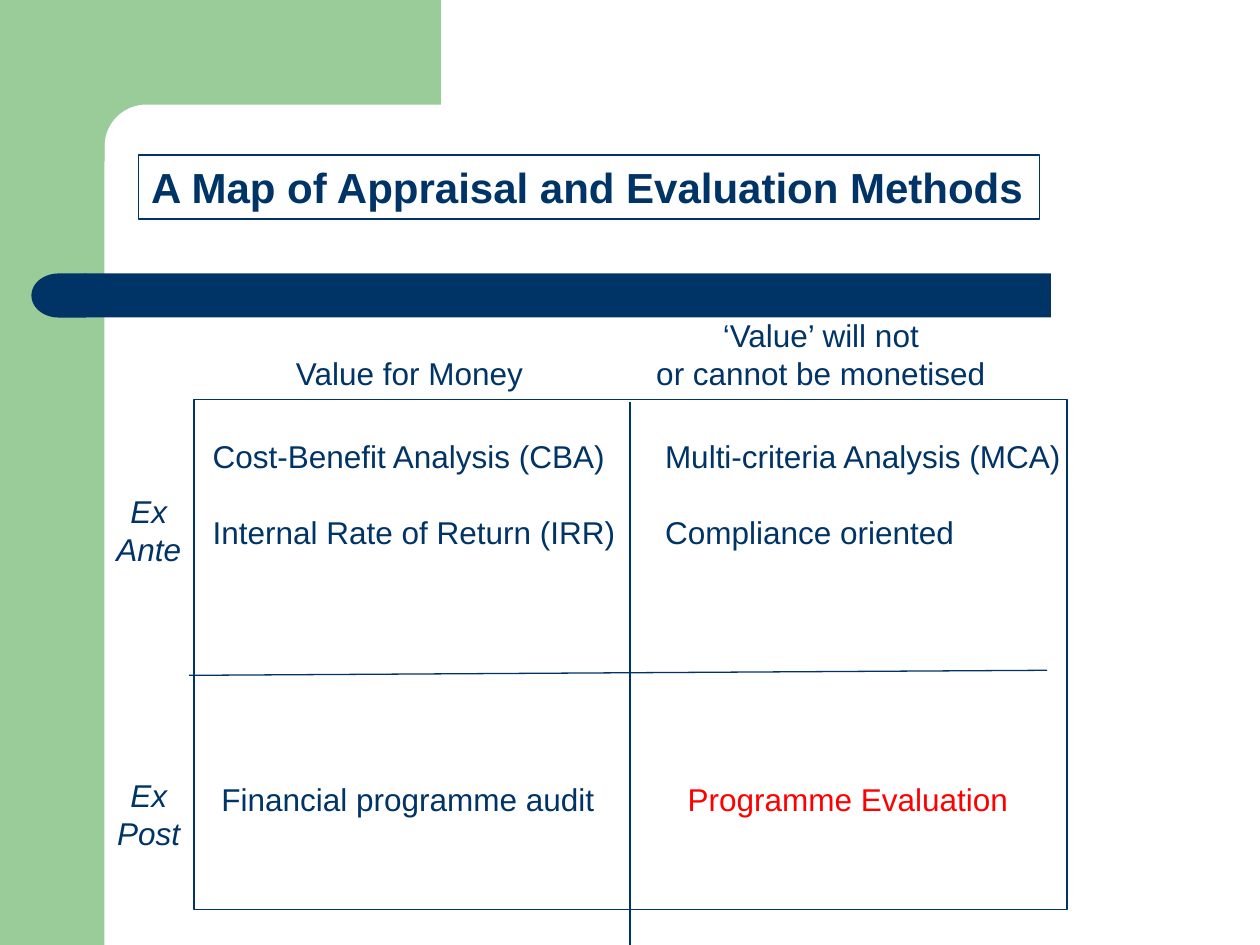
import math

import pptx
import pptx.dml.color
import pptx.enum.shapes
import pptx.enum.text
import pptx.oxml
import pptx.util
from pptx.util import Inches

COLOURS = {"green": "99CC99", "navy": "003366", "red": "FF0000"}
FONT = "Arial"
SHAPES = pptx.enum.shapes.MSO_SHAPE
ALIGN = pptx.enum.text.PP_ALIGN


def colour(name):
    return pptx.dml.color.RGBColor.from_string(COLOURS[name])


def style_shape(shape, fill=None, line=None):
    """Give a shape a plain fill and an optional (colour, width) outline."""
    shape.shadow.inherit = False
    if fill:
        shape.fill.solid()
        shape.fill.fore_color.rgb = colour(fill)
    else:
        shape.fill.background()
    if line:
        shape.line.color.rgb = colour(line[0])
        shape.line.width = pptx.util.Pt(line[1])
    else:
        shape.line.fill.background()


def add_block(slide, kind, left, top, width, height, **style):
    shape = slide.shapes.add_shape(
        kind, Inches(left), Inches(top), Inches(width), Inches(height))
    style_shape(shape, **style)
    return shape


def add_divider(slide, start, end):
    line = slide.shapes.add_connector(
        pptx.enum.shapes.MSO_CONNECTOR.STRAIGHT,
        *(Inches(value) for value in start + end))
    line.line.color.rgb = colour("navy")
    line.line.width = pptx.util.Pt(0.75)
    line._element.spPr.append(pptx.oxml.parse_xml(
        '<a:effectLst xmlns:a='
        '"http://schemas.openxmlformats.org/drawingml/2006/main"/>'))


def set_text(shape, lines, size=18, font_colour="navy", bold=False,
             italic=False, align=ALIGN.LEFT, gap=0, wrap=False):
    """Write one paragraph per line, with gap points between them."""
    frame = shape.text_frame
    frame.word_wrap = wrap
    frame.auto_size = pptx.enum.text.MSO_AUTO_SIZE.NONE
    frame.vertical_anchor = pptx.enum.text.MSO_ANCHOR.TOP
    for index, text in enumerate(lines):
        paragraph = frame.add_paragraph() if index else frame.paragraphs[0]
        paragraph.alignment = align
        paragraph.space_before = pptx.util.Pt(gap if index else 0)
        run = paragraph.add_run()
        run.text = text
        run.font.name = FONT
        run.font.size = pptx.util.Pt(size)
        run.font.bold = bold
        run.font.italic = italic
        run.font.color.rgb = colour(font_colour)


def add_label(slide, left, top, width, height, lines, **text_format):
    box = slide.shapes.add_textbox(
        Inches(left), Inches(top), Inches(width), Inches(height))
    set_text(box, lines, **text_format)


def add_corner(slide):
    """Top green band, with a rounded inner corner."""
    radius, inner_left, inner_top = 0.33, 0.83, 0.83
    arc = []
    for degrees in range(0, 91, 5):
        angle = math.radians(degrees)
        arc.append((inner_left + radius * (1 - math.sin(angle)),
                    inner_top + radius * (1 - math.cos(angle))))
    points = [(3.5, inner_top)] + arc + [(inner_left, 1.28), (0.5, 1.28), (0.5, 0)]
    builder = slide.shapes.build_freeform(Inches(3.5), 0)
    builder.add_line_segments([(Inches(x), Inches(y)) for x, y in points])
    style_shape(builder.convert_to_shape(), fill="green")


def add_decoration(slide):
    add_block(slide, SHAPES.RECTANGLE, 0, 0, 0.83, 7.5, fill="green")
    add_corner(slide)
    add_block(slide, SHAPES.RECTANGLE, 0.67, 2.17, 7.67, 0.35, fill="navy")
    cap = add_block(slide, SHAPES.FLOWCHART_DELAY, 0.25, 2.17, 0.43, 0.35,
                    fill="navy")
    cap._element.spPr.xfrm.set("flipH", "1")


def add_title(slide):
    title = slide.shapes.title
    title.left, title.top = Inches(1.1), Inches(1.23)
    title.width, title.height = Inches(7.15), Inches(0.51)
    title.line.color.rgb = colour("navy")
    title.line.width = pptx.util.Pt(1)
    set_text(title, ["A Map of Appraisal and Evaluation Methods"],
             size=24, bold=True)


def add_matrix(slide):
    # Frame and dividers
    add_block(slide, SHAPES.RECTANGLE, 1.54, 3.17, 6.93, 4.05,
              line=("navy", 0.75))
    add_divider(slide, (5, 3.19), (5, 7.53))
    add_divider(slide, (1.5, 5.36), (8.31, 5.32))

    # Row and column headings
    for top, stage in ((3.86, "Ante"), (6.11, "Post")):
        add_label(slide, 0.82, top, 0.72, 0.7, ["Ex", stage],
                  italic=True, align=ALIGN.CENTER)
    add_label(slide, 2.25, 2.76, 2.02, 0.4, ["Value for Money"])
    add_label(slide, 5, 2.46, 3.03, 0.7,
              ["‘Value’ will not", "or cannot be monetised"],
              align=ALIGN.CENTER, wrap=True)

    # Methods in each quadrant
    add_label(slide, 1.59, 3.42, 3.4, 1,
              ["Cost-Benefit Analysis (CBA)", "Internal Rate of Return (IRR)"],
              gap=21.6)
    add_label(slide, 5.18, 3.42, 3.35, 1,
              ["Multi-criteria Analysis (MCA)", "Compliance oriented"],
              gap=21.6)
    add_label(slide, 1.66, 6.14, 3.16, 0.4, ["Financial programme audit"])
    add_label(slide, 5.36, 6.14, 2.74, 0.4, ["Programme Evaluation"],
              font_colour="red")


def main():
    presentation = pptx.Presentation()
    presentation.slide_width = Inches(10)
    presentation.slide_height = Inches(7.5)
    slide = presentation.slides.add_slide(presentation.slide_layouts[5])
    add_decoration(slide)
    add_title(slide)
    add_matrix(slide)
    presentation.save("out.pptx")


if __name__ == "__main__":
    main()
